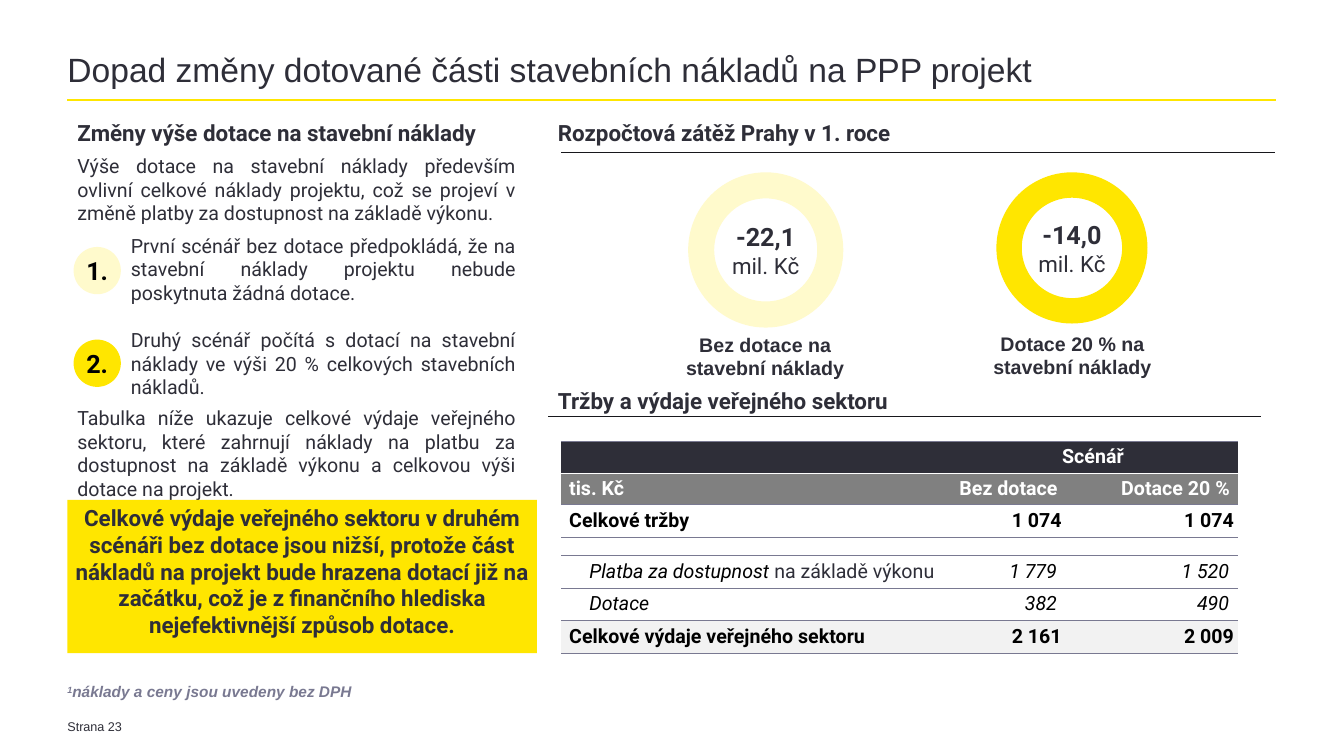
from lxml.etree import SubElement
from pptx import Presentation
from pptx.dml.color import RGBColor
from pptx.enum.shapes import MSO_CONNECTOR as CONN, MSO_SHAPE as SHAPE
from pptx.enum.text import MSO_ANCHOR as ANCHOR, PP_ALIGN as ALIGN
from pptx.oxml.ns import qn
from pptx.util import Pt

COLORS = {"ink": "2E2E38", "yellow": "FFE600", "pale": "FFFACC", "rule": "17171C",
          "muted": "797991", "header": "808080", "total": "F2F2F2",
          "black": "000000", "white": "FFFFFF"}
NO_INSET = (0, 2.9, 0, 0)
LABEL_INSET = (5.8, 1.4, 5.8, 1.4)
NUMBER_INSET = (2.9, 2.9, 2.9, 2.9)


def color(name):
    return RGBColor.from_string(COLORS[name])


class Page:
    """Slide builder that holds the text style and the current slide."""

    def __init__(self, slide, font="Roboto", ink="ink"):
        self.slide, self.font, self.ink = slide, font, ink

    def para(self, p, text, size=14, bold=False, italic=False, ink=None,
             font=None, align=ALIGN.LEFT, before=0, spacing=None):
        p.alignment = align
        p.space_before = Pt(before)
        if spacing:
            p.line_spacing = spacing
        f = p.font
        f.name, f.size, f.bold, f.italic = font or self.font, Pt(size), bold, italic
        f.color.rgb = color(ink or self.ink)
        return self.run(p, text)

    def run(self, p, text):
        r = p.add_run()
        r.text = text
        return r

    def frame(self, tf, inset):
        tf.word_wrap = True
        tf.margin_left, tf.margin_top, tf.margin_right, tf.margin_bottom = map(Pt, inset)

    def text(self, box, text, inset=(7.2, 3.6, 7.2, 3.6), **style):
        tf = self.slide.shapes.add_textbox(*map(Pt, box)).text_frame
        self.frame(tf, inset)
        self.para(tf.paragraphs[0], text, **style)
        return tf

    def shape(self, kind, box, fill):
        sp = self.slide.shapes.add_shape(kind, *map(Pt, box))
        sp.shadow.inherit = False
        sp.fill.solid()
        sp.fill.fore_color.rgb = color(fill)
        sp.line.fill.background()
        return sp

    def label(self, kind, box, fill, text, inset, anchor, **style):
        tf = self.shape(kind, box, fill).text_frame
        self.frame(tf, inset)
        tf.vertical_anchor = anchor
        self.para(tf.paragraphs[0], text, bold=True, align=ALIGN.CENTER, **style)

    def line(self, x1, x2, y, ink, width):
        cx = self.slide.shapes.add_connector(CONN.STRAIGHT, Pt(x1), Pt(y), Pt(x2), Pt(y))
        cx.line.color.rgb, cx.line.width = color(ink), Pt(width)
        SubElement(cx._element.spPr, qn("a:effectLst"))

    def donut(self, box, fill, value, value_box, caption, caption_box):
        self.shape(SHAPE.DONUT, box, fill).adjustments[0] = 0.168
        p = self.text(value_box, value, NO_INSET, size=18, bold=True,
                      align=ALIGN.CENTER).paragraphs[0]
        p.add_line_break()
        r = self.run(p, "mil. Kč")
        r.font.size, r.font.bold = Pt(16), False
        self.text(caption_box, caption, NO_INSET, font="Arial", bold=True,
                  align=ALIGN.CENTER)

    def cell(self, cell, text, inset, fill, top, bottom, **style):
        cell.vertical_anchor = ANCHOR.MIDDLE
        cell.margin_left, cell.margin_top, cell.margin_right, cell.margin_bottom = map(Pt, inset)
        p = cell.text_frame.paragraphs[0]
        if text:
            self.para(p, text, **style)
        else:
            SubElement(p._p, qn("a:endParaRPr"), sz="600")
        tc_pr = cell._tc.get_or_add_tcPr()
        for side, ink in (("L", None), ("R", None), ("T", top), ("B", bottom)):
            ln = SubElement(tc_pr, qn("a:ln" + side), w="3175")
            if ink:
                SubElement(SubElement(ln, qn("a:solidFill")), qn("a:srgbClr"), val=COLORS[ink])
            else:
                SubElement(ln, qn("a:noFill"))
        if fill:
            cell.fill.solid()
            cell.fill.fore_color.rgb = color(fill)
        else:
            cell.fill.background()
        return p

    def table(self, box, widths, heights, rows):
        table = self.slide.shapes.add_table(len(rows), len(widths), *map(Pt, box)).table
        table.first_row = table.horz_banding = False
        for col, width in zip(table.columns, widths):
            col.width = Pt(width)
        for row, height in zip(table.rows, heights):
            row.height = Pt(height)
        for i, (texts, fill, style) in enumerate(rows):
            top = "white" if i == 1 else "muted"
            bottom = "white" if i == 0 else "muted"
            for j, text in enumerate(texts):
                inset = LABEL_INSET if j == 0 or i < 2 else NUMBER_INSET
                align = ALIGN.LEFT if j == 0 else ALIGN.CENTER if i == 0 else ALIGN.RIGHT
                if j == 0 and style.get("italic"):
                    inset = (20.2,) + LABEL_INSET[1:]
                self.cell(table.cell(i, j), text, inset, fill, top, bottom,
                          align=align, **style)
        table.cell(0, 1).merge(table.cell(0, 2))
        return table


def main():
    prs = Presentation()
    prs.slide_width, prs.slide_height = Pt(960.5), Pt(540)
    s = Page(prs.slides.add_slide(prs.slide_layouts[6]))

    s.text((48.2, 512.6, 72, 12.2), "Strana 23", NO_INSET, size=9, font="Arial", spacing=0.85)
    s.line(48.2, 912.2, 71.5, "yellow", 1.5)
    s.text((48.2, 39.6, 852.5, 46.8), "Dopad změny dotované části stavebních nákladů na PPP projekt",
           (0, 0, 0, 0), size=24, font="Arial", spacing=0.85)

    header = {"bold": True, "ink": "white"}
    total = {"bold": True, "ink": "black"}
    detail = {"italic": True, "ink": "black"}
    table = s.table((401, 315.4, 483.8, 150.5), (276.5, 84.2, 123.1),
                    (22.3, 22.3, 23.4, 13.2, 23.4, 23.4, 23.2), [
        (("", "Scénář", ""), "ink", header),
        (("tis. Kč", "Bez dotace", "Dotace 20 %"), "header", header),
        (("Celkové tržby", "1 074", "1 074"), None, total),
        (("", "", ""), None, {}),
        (("Platba za dostupnost ", "1 779 ", "1 520 "), None, detail),
        (("Dotace", "382 ", "490 "), None, detail),
        (("Celkové výdaje veřejného sektoru", "2 161", "2 009"), "total", total)])
    r = s.run(table.cell(4, 0).text_frame.paragraphs[0], "na základě výkonu")
    r.font.italic, r.font.color.rgb = False, color("ink")

    s.text((391.7, 81.4, 530.6, 26.6), "Rozpočtová zátěž Prahy v 1. roce", size=16, bold=True)
    s.line(401, 911.5, 108.7, "rule", 0.75)
    s.donut((491.8, 123.1, 110.9, 110.9), "pale", "-22,1", (500.4, 155.5, 93.6, 43.9),
            "Bez dotace na stavební náklady", (474.5, 234.7, 144.7, 36.7))
    s.donut((712.1, 123.1, 108, 108), "yellow", "-14,0", (719.3, 154.1, 93.6, 43.9),
            "Dotace 20 % na stavební náklady", (694.1, 234, 144.7, 36.7))
    s.line(391.7, 901.4, 297.4, "rule", 0.75)
    s.text((391.7, 272.9, 501.8, 26.6), "Tržby a výdaje veřejného sektoru", size=16, bold=True)

    tf = s.text((48.2, 81.4, 327.6, 83.5), "Změny výše dotace na stavební náklady",
                size=16, bold=True)
    s.para(tf.add_paragraph(), "Výše dotace na stavební náklady především ovlivní celkové náklady "
           "projektu, což se projeví v změně platby za dostupnost na základě výkonu.",
           align=ALIGN.JUSTIFY, before=6)
    tf = s.text((86.4, 163.4, 289.4, 110.9), "První scénář bez dotace předpokládá, že na stavební "
                "náklady projektu nebude poskytnuta žádná dotace.", align=ALIGN.JUSTIFY)
    s.para(tf.add_paragraph(), "Druhý scénář počítá s dotací na stavební náklady ve výši 20 % "
           "celkových stavebních nákladů.", align=ALIGN.JUSTIFY, before=16.9)
    for number, y, fill in (("1.", 176.4, "pale"), ("2.", 242.6, "yellow")):
        s.label(SHAPE.OVAL, (52.6, y, 33.8, 33.8), fill, number, (0, 0, 0, 0),
                ANCHOR.MIDDLE, size=18, ink="black")
    s.text((48.2, 286.6, 327.6, 74.9), "Tabulka níže ukazuje celkové výdaje veřejného sektoru, "
           "které zahrnují náklady na platbu za dostupnost na základě výkonu a celkovou výši "
           "dotace na projekt.", align=ALIGN.JUSTIFY)
    s.label(SHAPE.RECTANGLE, (48.2, 357.1, 335.5, 109.4), "yellow",
            "Celkové výdaje veřejného sektoru v druhém scénáři bez dotace jsou nižší, protože část "
            "nákladů na projekt bude hrazena dotací již na začátku, což je z finančního hlediska "
            "nejefektivnější způsob dotace.", NUMBER_INSET, ANCHOR.TOP, size=16)

    p = s.text((48.2, 484.6, 313.9, 16.6), "1", NO_INSET, size=11, bold=True, italic=True,
               ink="muted", font="Arial").paragraphs[0]
    p.runs[0].font._element.set("baseline", "30000")
    s.run(p, "náklady a ceny jsou uvedeny bez DPH")

    prs.save("out.pptx")


if __name__ == "__main__":
    main()
